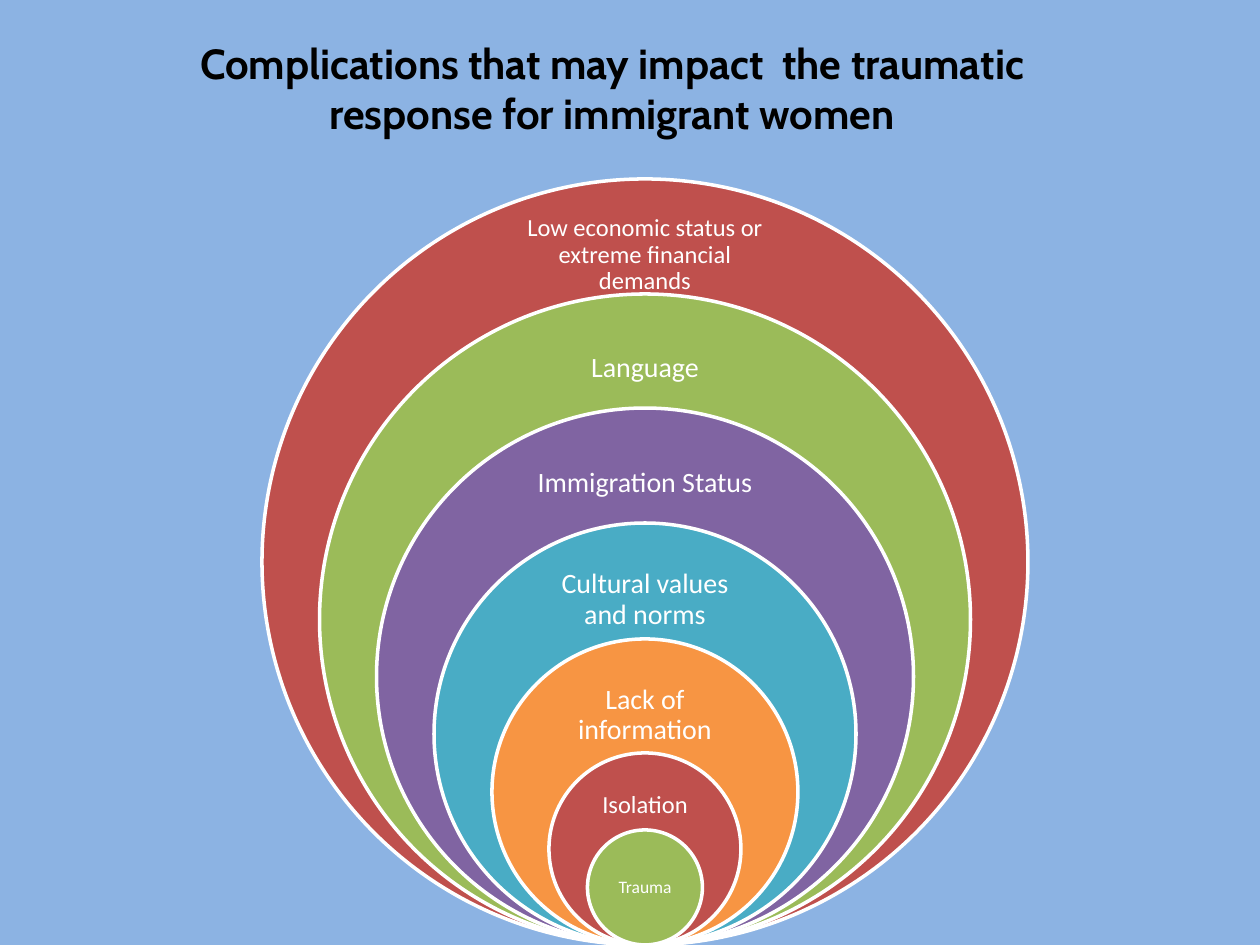
from pptx import Presentation
from pptx.dml.color import RGBColor
from pptx.enum.shapes import MSO_SHAPE as Shape
from pptx.enum.text import MSO_ANCHOR as Anchor, MSO_AUTO_SIZE as Fit, PP_ALIGN as Align
from pptx.util import Pt

SCALE = 914400 // 126
MID, BASE = 645, 945
COLORS = {
    "sky": "8CB3E3", "black": "000000", "white": "FFFFFF", "red": "BF504D",
    "green": "9BBB59", "purple": "8064A2", "teal": "49ACC5", "orange": "F79543",
}
RINGS = [
    ("Low economic status or extreme financial demands", "red", 766, (217, 287, 77), 14, 14),
    ("Language", "green", 651, (331, 281, 74), 15, 16),
    ("Immigration Status", "purple", 537, (446, 277, 74), 15, 16),
    ("Cultural values and norms", "teal", 422, (562, 228, 76), 15, 16),
    ("Lack of information", "orange", 306, (677, 199, 77), 15, 16),
    ("Isolation", "red", 192, (782, 130, 47), 14, 14),
    ("Trauma", "green", 115, (859, 82, 58), 10, 10),
]


def px(*nums):
    return [round(n * SCALE) for n in nums]


def tint(name):
    return RGBColor.from_string(COLORS[name])


def write(shape, text, face, size, color, pad, bold=False):
    frame = shape.text_frame
    frame.text = text
    frame.word_wrap = True
    frame.auto_size = Fit.NONE
    frame.vertical_anchor = Anchor.MIDDLE
    frame.margin_left, frame.margin_top, frame.margin_right, frame.margin_bottom = px(*pad)
    para = frame.paragraphs[0]
    para.alignment = Align.CENTER
    font = para.font
    font.name, font.size, font.bold = face, Pt(size), bold
    font.color.rgb = tint(color)
    return para


def add_title(slide, text):
    title = slide.shapes.title
    title.left, title.top, title.width, title.height = px(146, -2, 932, 179)
    write(title, text, "Cabin", 24, "black", (13, 6, 13, 6), True)


def add_disc(group, color, size):
    disc = group.shapes.add_shape(Shape.OVAL, *px(MID - size / 2, BASE - size, size, size))
    disc.shadow.inherit = False
    disc.fill.solid()
    disc.fill.fore_color.rgb = tint(color)
    disc.line.color.rgb = tint("white")
    disc.line.width = Pt(2)


def add_label(group, text, top, width, height, pad, size):
    box = group.shapes.add_textbox(*px(MID - width / 2, top, width, height))
    para = write(box, text, "Calibri", size, "white", [pad] * 4)
    para.line_spacing = 0.9


def main():
    deck = Presentation()
    deck.slide_width, deck.slide_height = px(1260, 945)
    slide = deck.slides.add_slide(deck.slide_layouts[5])
    back = slide.background.fill
    back.solid()
    back.fore_color.rgb = tint("sky")
    add_title(slide, "Complications that may impact  the traumatic response for immigrant women")
    group = slide.shapes.add_group_shape()
    for text, color, size, place, pad, points in RINGS:
        add_disc(group, color, size)
        add_label(group, text, *place, pad, points)
    deck.save("out.pptx")


if __name__ == "__main__":
    main()
